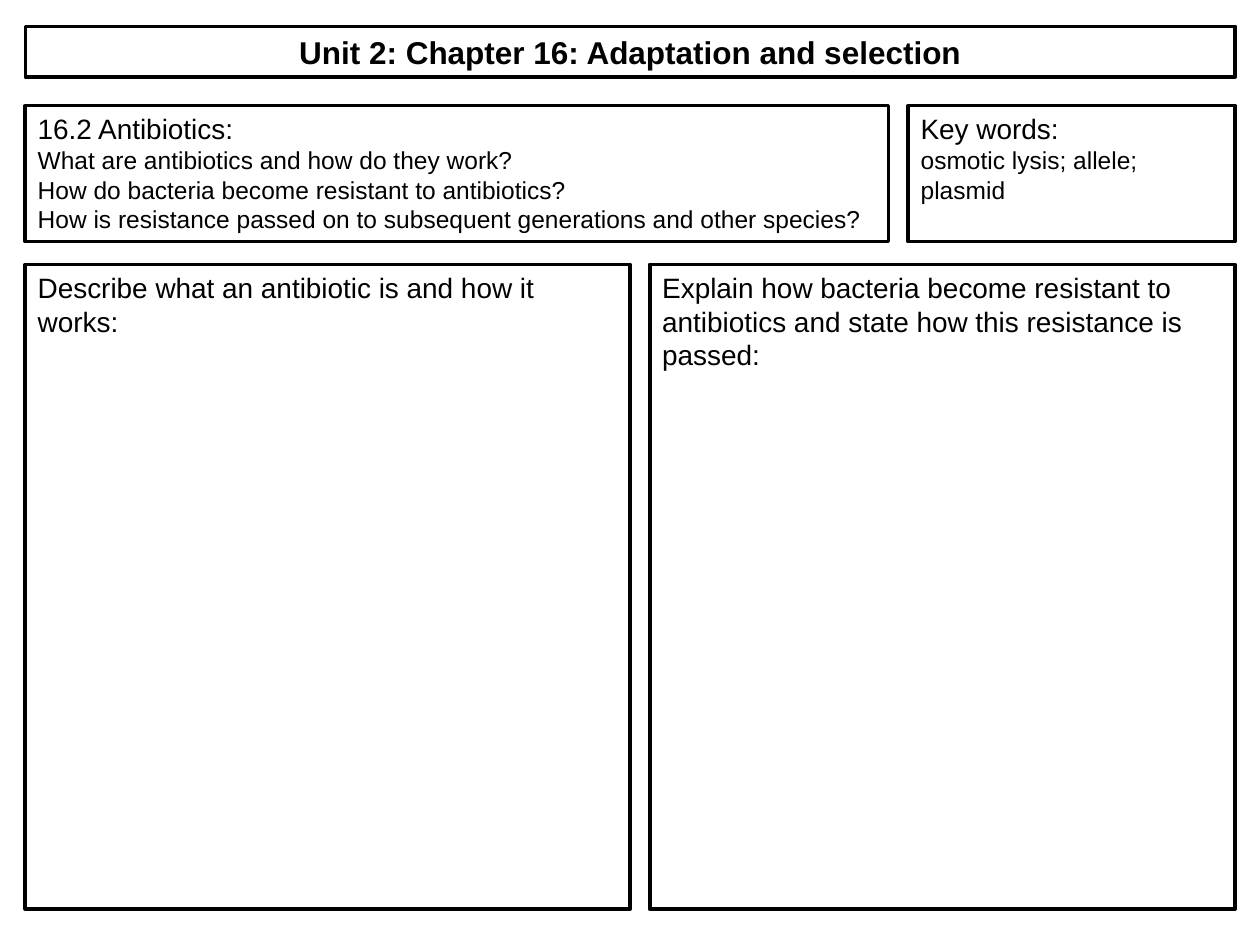
import pptx
import pptx.util
import pptx.dml.color
import pptx.enum.shapes
import pptx.enum.text
from pptx.util import Cm

ALIGN = pptx.enum.text.PP_ALIGN
ANCHOR = pptx.enum.text.MSO_ANCHOR


def color(hex_code):
    return pptx.dml.color.RGBColor.from_string(hex_code)


def write_panel(panel, lines, sizes, bold=False, align=ALIGN.LEFT, anchor=ANCHOR.TOP):
    """Give a panel its white fill and black frame, and one paragraph per line."""
    panel.fill.solid()
    panel.fill.fore_color.rgb = color("FFFFFF")
    panel.line.color.rgb = color("000000")
    panel.line.width = pptx.util.Pt(2)
    frame = panel.text_frame
    frame.word_wrap = True
    frame.auto_size = pptx.enum.text.MSO_AUTO_SIZE.NONE
    frame.vertical_anchor = anchor
    frame.text = "\n".join(lines)
    for paragraph, size in zip(frame.paragraphs, sizes):
        paragraph.alignment = align
        font = paragraph.runs[0].font
        font.name = "Arial"
        font.size = pptx.util.Pt(size)
        font.bold = bold
        font.color.rgb = color("000000")


presentation = pptx.Presentation()
presentation.slide_width = Cm(25.4)
presentation.slide_height = Cm(19.05)
slide = presentation.slides.add_slide(presentation.slide_layouts[5])

left, right = 0.51, 24.9
gap = 0.4

heading = slide.shapes.title
heading.left, heading.top = Cm(left), Cm(0.53)
heading.width, heading.height = Cm(right - left), Cm(1.02)
write_panel(heading, ["Unit 2: Chapter 16: Adaptation and selection"], [18],
            bold=True, align=ALIGN.CENTER, anchor=ANCHOR.MIDDLE)

# Each row: top, height, width of its left panel, lines of the left and right panel
rows = [
    (2.13, 2.74, 17.4,
     ["16.2 Antibiotics:",
      "What are antibiotics and how do they work?",
      "How do bacteria become resistant to antibiotics?",
      "How is resistance passed on to subsequent generations and other species?"],
     ["Key words:", "osmotic lysis; allele; plasmid"]),
    (5.33, 13, 12.19,
     ["Describe what an antibiotic is and how it works:"],
     ["Explain how bacteria become resistant to antibiotics "
      "and state how this resistance is passed:"]),
]
for top, height, left_width, left_lines, right_lines in rows:
    right_start = left + left_width + gap
    for start, width, lines in [(left, left_width, left_lines),
                                (right_start, right - right_start, right_lines)]:
        panel = slide.shapes.add_shape(pptx.enum.shapes.MSO_SHAPE.RECTANGLE,
                                       Cm(start), Cm(top), Cm(width), Cm(height))
        panel.shadow.inherit = False
        write_panel(panel, lines, [16] + [14] * (len(lines) - 1))

presentation.save("out.pptx")
